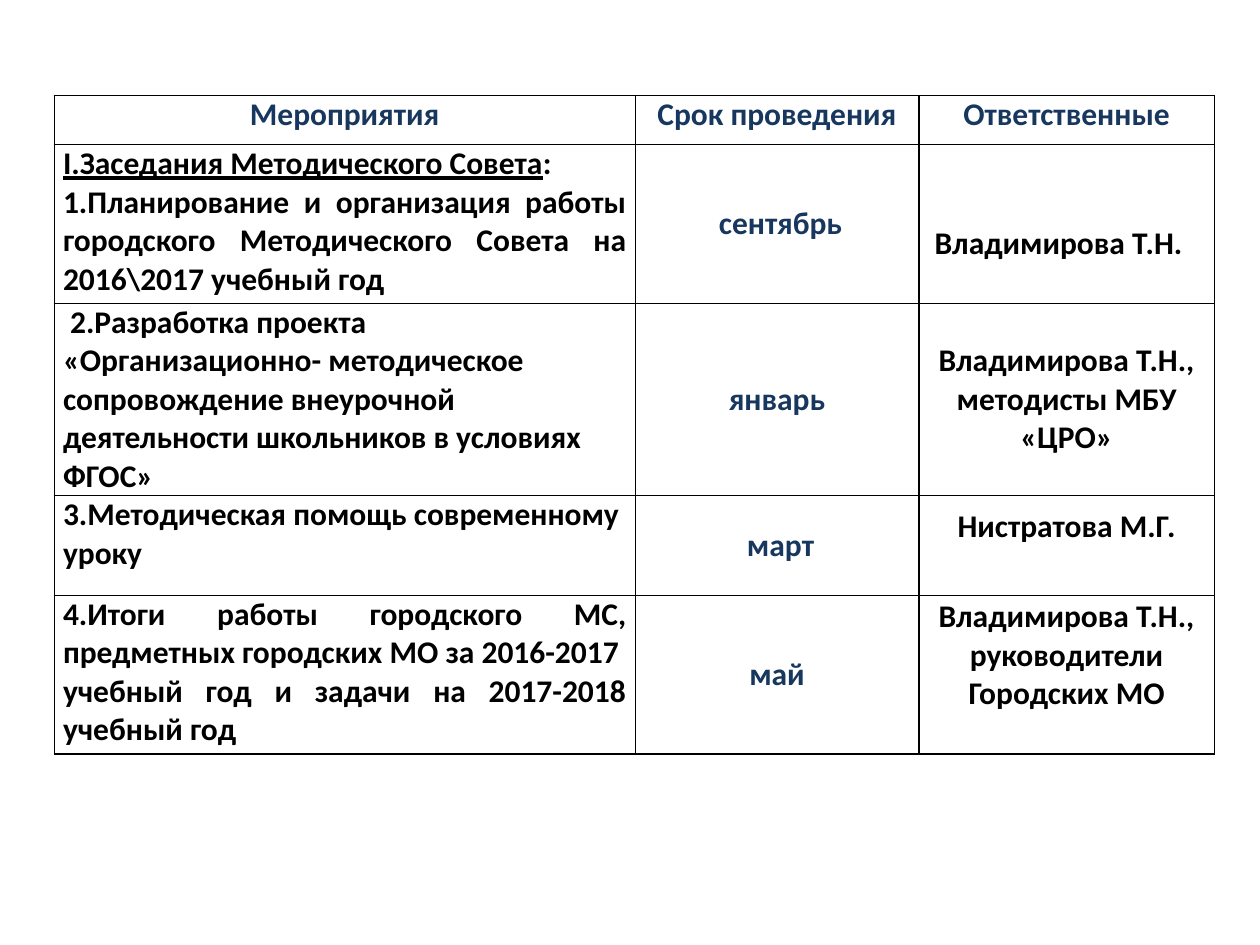
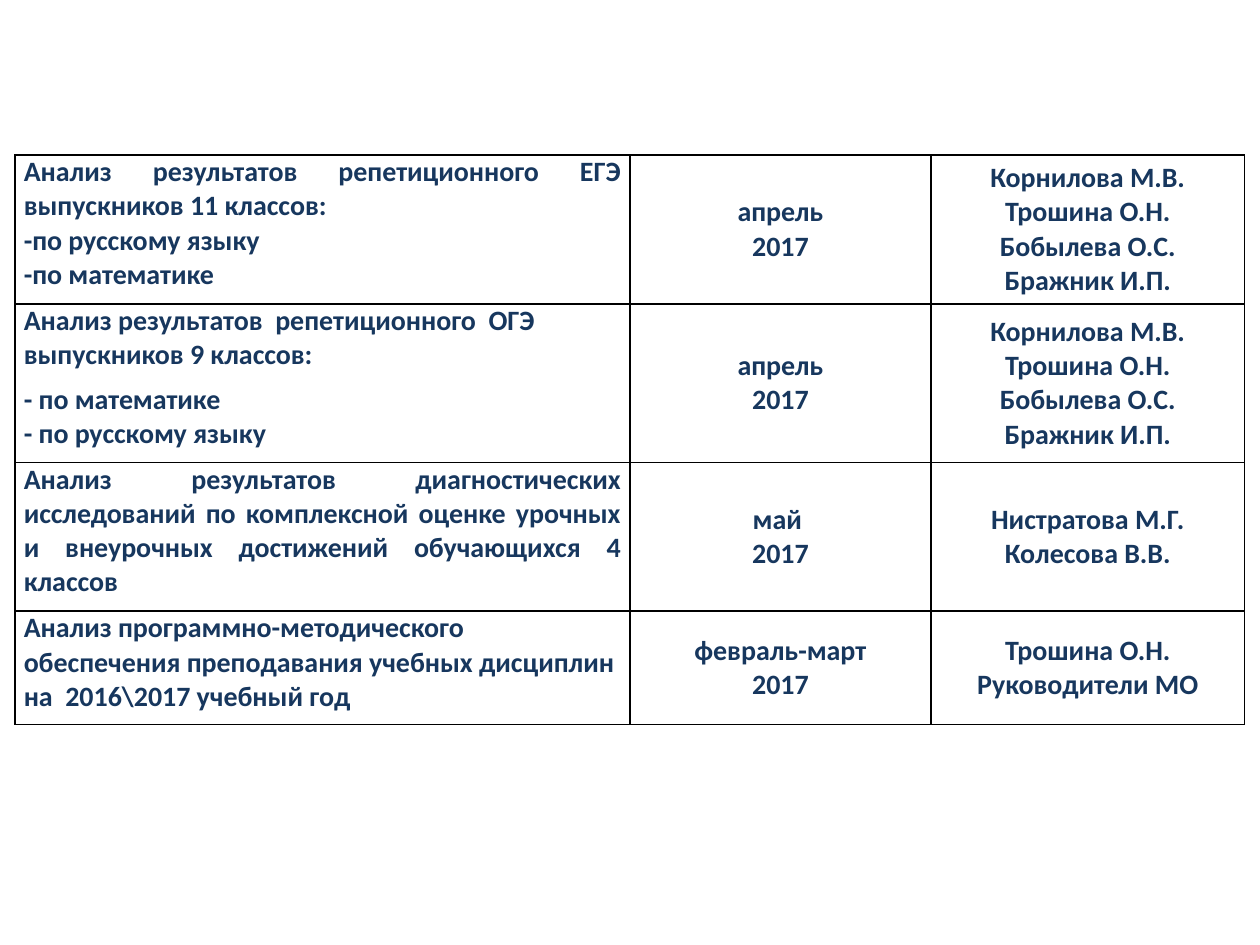
from dataclasses import dataclass

from lxml import etree
from pptx import Presentation
from pptx.dml.color import RGBColor
from pptx.enum.text import MSO_ANCHOR, PP_ALIGN
from pptx.oxml.ns import qn
from pptx.util import Pt

LEFT, CENTER, JUSTIFY = PP_ALIGN.LEFT, PP_ALIGN.CENTER, PP_ALIGN.JUSTIFY
TOP, MIDDLE = MSO_ANCHOR.TOP, MSO_ANCHOR.MIDDLE

NAVY = RGBColor(0x17, 0x37, 0x5E)
BLACK = RGBColor(0x00, 0x00, 0x00)
WHITE = RGBColor(0xFF, 0xFF, 0xFF)
FONT = "Calibri"
BORDER = Pt(1)
SIDE_MARGIN = Pt(5)
LINE_18 = Pt(22)  # height of one 18 pt line


@dataclass
class Para:
    text: str
    align: PP_ALIGN = LEFT
    space_after: float = 0
    underlined: str = ""  # lead-in set before the text


@dataclass
class CellText:
    paras: list[Para]
    color: RGBColor = NAVY
    anchor: MSO_ANCHOR = TOP
    margin_top: int = 0
    margin_bottom: int = 0


@dataclass
class PlanTable:
    left: float
    top: float
    col_widths: list[float]
    row_heights: list[float]
    size: int
    rows: list[list[CellText]]
    fill: RGBColor | None = None


def centered(*lines: str, color: RGBColor = NAVY, anchor: MSO_ANCHOR = MIDDLE,
             margin_bottom: int = 0) -> CellText:
    return CellText([Para(line, CENTER) for line in lines], color, anchor,
                    margin_bottom=margin_bottom)


def set_borders(cell) -> None:
    tc_pr = cell._tc.get_or_add_tcPr()
    for side in ("lnL", "lnR", "lnT", "lnB"):
        ln = etree.SubElement(tc_pr, qn(f"a:{side}"), w=str(int(BORDER)))
        solid = etree.SubElement(ln, qn("a:solidFill"))
        etree.SubElement(solid, qn("a:srgbClr"), val=str(BLACK))


def write_cell(cell, content: CellText, size: int, fill: RGBColor | None) -> None:
    set_borders(cell)
    if fill is None:
        cell.fill.background()
    else:
        cell.fill.solid()
        cell.fill.fore_color.rgb = fill
    cell.margin_left = cell.margin_right = SIDE_MARGIN
    cell.margin_top, cell.margin_bottom = content.margin_top, content.margin_bottom
    cell.vertical_anchor = content.anchor

    tf = cell.text_frame
    for i, para in enumerate(content.paras):
        p = tf.paragraphs[0] if i == 0 else tf.add_paragraph()
        p.alignment = para.align
        p.space_after = Pt(para.space_after)
        p.font.name, p.font.size, p.font.bold = FONT, Pt(size), True
        p.font.color.rgb = content.color
        if para.underlined:
            r = p.add_run()
            r.text = para.underlined
            r.font.underline = True
        p.add_run().text = para.text


def add_plan_slide(prs, plan: PlanTable) -> None:
    s = prs.slides.add_slide(prs.slide_layouts[6])
    frame = s.shapes.add_table(
        len(plan.row_heights), len(plan.col_widths), Pt(plan.left), Pt(plan.top),
        Pt(sum(plan.col_widths)), Pt(sum(plan.row_heights)))
    table = frame.table
    table.first_row = table.horz_banding = False
    for column, width in zip(table.columns, plan.col_widths):
        column.width = Pt(width)
    for row, height, contents in zip(table.rows, plan.row_heights, plan.rows):
        row.height = Pt(height)
        for cell, content in zip(row.cells, contents):
            write_cell(cell, content, plan.size, plan.fill)


# Meetings of the methodical council
COUNCIL = PlanTable(
    31, 54.7, [332, 162, 169], [28, 90.7, 102.2, 57, 90.7], 18,
    [
        [centered(name, anchor=TOP)
         for name in ("Мероприятия", "Срок проведения", "Ответственные")],
        [
            CellText([
                Para(":", JUSTIFY, underlined="I.Заседания Методического Совета"),
                Para("1.Планирование и организация работы городского Методического "
                     "Совета на 2016\\2017 учебный год", JUSTIFY),
            ], BLACK),
            centered(" сентябрь"),
            CellText([Para(" Владимирова Т.Н.", JUSTIFY)], BLACK, MIDDLE,
                     margin_top=LINE_18),
        ],
        [
            CellText([Para(" 2.Разработка проекта «Организационно- методическое "
                           "сопровождение внеурочной деятельности школьников "
                           "в условиях ФГОС»")], BLACK),
            centered("январь"),
            centered("Владимирова Т.Н., методисты МБУ «ЦРО»", color=BLACK),
        ],
        [
            CellText([Para("3.Методическая помощь современному уроку")], BLACK),
            centered(" март"),
            centered("Нистратова М.Г.", color=BLACK, margin_bottom=LINE_18),
        ],
        [
            CellText([Para("4.Итоги работы городского МС, предметных городских МО "
                           "за 2016-2017  учебный год и задачи на 2017-2018 "
                           "учебный год", JUSTIFY)], BLACK),
            centered("май"),
            centered("Владимирова Т.Н., руководители Городских МО", color=BLACK,
                     margin_bottom=LINE_18),
        ],
    ])

# Analysis of results
EXAM_TEAM = centered("Корнилова М.В.", "Трошина О.Н.", "Бобылева О.С.", "Бражник И.П.")
APRIL = centered("апрель", "2017")
ANALYSIS = PlanTable(
    8.6, 88.6, [351.4, 172, 179.3], [85, 90.7, 85, 64.8], 16,
    [
        [
            CellText([
                Para("Анализ результатов репетиционного ЕГЭ выпускников 11 классов:",
                     JUSTIFY),
                Para("-по русскому языку", JUSTIFY),
                Para("-по математике"),
            ]),
            APRIL,
            EXAM_TEAM,
        ],
        [
            CellText([
                Para("Анализ результатов  репетиционного  ОГЭ  выпускников 9 классов:",
                     space_after=6),
                Para("- по математике", JUSTIFY),
                Para("- по русскому языку"),
            ]),
            APRIL,
            EXAM_TEAM,
        ],
        [
            CellText([Para("Анализ результатов диагностических исследований "
                           "по комплексной оценке урочных и внеурочных достижений "
                           "обучающихся 4 классов", JUSTIFY)]),
            centered("май ", "2017"),
            centered("Нистратова М.Г.", "Колесова В.В."),
        ],
        [
            CellText([Para("Анализ программно-методического обеспечения преподавания "
                           "учебных дисциплин  на  2016\\2017 учебный год")]),
            centered("февраль-март", "2017"),
            centered("Трошина О.Н.", "Руководители МО"),
        ],
    ], WHITE)


def main() -> None:
    prs = Presentation()
    prs.slide_width, prs.slide_height = Pt(720), Pt(540)
    for plan in (COUNCIL, ANALYSIS):
        add_plan_slide(prs, plan)
    prs.save("out.pptx")


if __name__ == "__main__":
    main()
